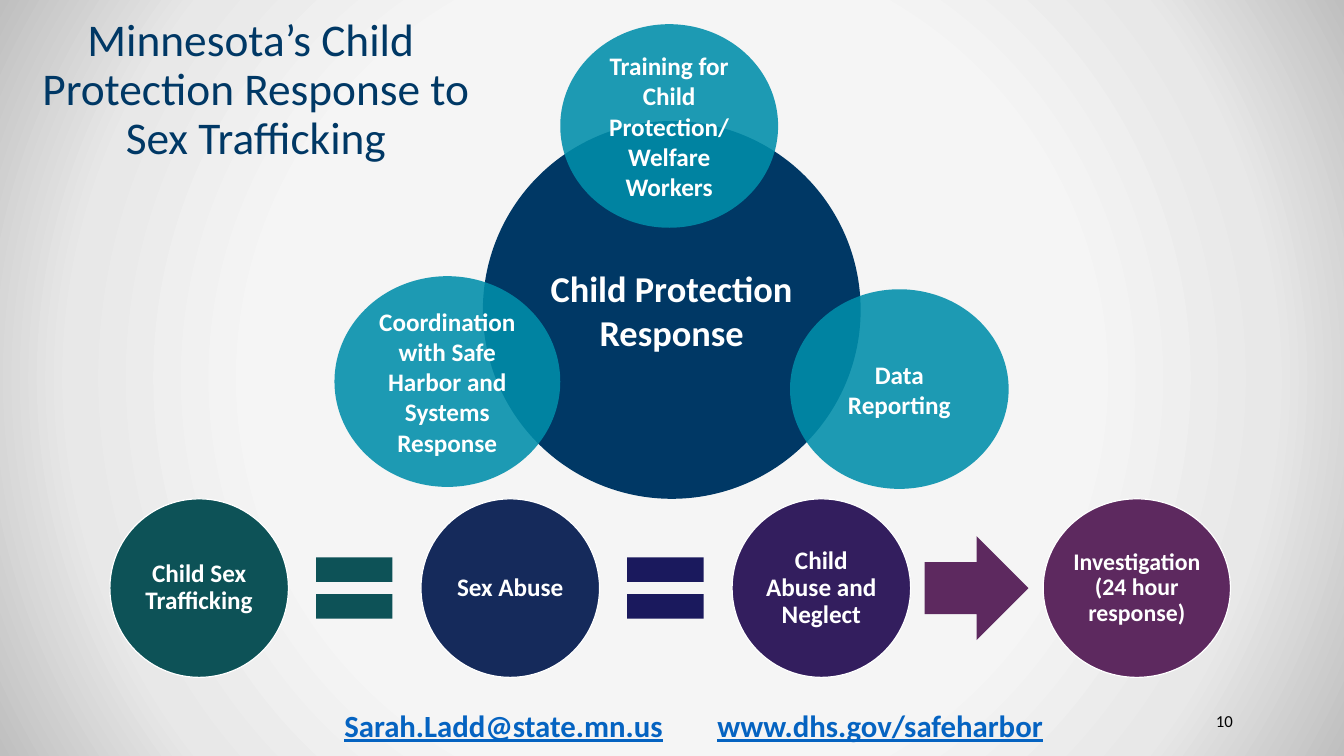
from dataclasses import dataclass

from lxml.etree import SubElement
from pptx import Presentation
from pptx.dml.color import RGBColor
from pptx.enum.shapes import MSO_SHAPE
from pptx.enum.text import MSO_ANCHOR, MSO_AUTO_SIZE, PP_ALIGN
from pptx.oxml import parse_xml
from pptx.oxml.ns import nsdecls, qn
from pptx.util import Cm, Pt


@dataclass(frozen=True)
class Theme:
    font: str = "Calibri"
    navy: str = "003865"
    aqua: str = "008EAA"
    green: str = "0D5257"
    blue: str = "152A5B"
    indigo: str = "1A195D"
    violet: str = "331E5E"
    plum: str = "5D295F"
    white: str = "FFFFFF"
    black: str = "000000"
    link: str = "0563C1"
    title: float = 32.4
    hub: float = 26
    contact: float = 22
    label: float = 18
    small_label: float = 17
    number: float = 12
    background: tuple = ((53, "F5F5F5"), (78, "E8E8E8"), (100, "BFBFBF"))


class SlideBuilder:
    def __init__(self, slide, theme):
        self.s = slide
        self.t = theme

    def background(self):
        stops = "".join(
            f'<a:gs pos="{pos * 1000}"><a:srgbClr val="{color}"/></a:gs>'
            for pos, color in self.t.background
        )
        bg = parse_xml(
            f'<p:bg {nsdecls("p", "a")}><p:bgPr><a:gradFill><a:gsLst>{stops}</a:gsLst>'
            '<a:path path="circle"><a:fillToRect l="50000" t="50000" r="50000" b="50000"/>'
            "</a:path></a:gradFill><a:effectLst/></p:bgPr></p:bg>"
        )
        self.s._element.cSld.insert(0, bg)

    def style(self, p, size, color, bold=False, align=PP_ALIGN.CENTER, spacing=1.0):
        p.alignment = align
        p.line_spacing = spacing
        p.font.name = self.t.font
        p.font.size = Pt(size)
        p.font.bold = bold
        p.font.color.rgb = RGBColor.from_string(color)

    def title(self, text, x, y, w, h):
        sp = self.s.shapes.title
        sp.left, sp.top, sp.width, sp.height = Cm(x), Cm(y), Cm(w), Cm(h)
        tf = sp.text_frame
        tf.text = text
        tf.word_wrap = True
        tf.auto_size = MSO_AUTO_SIZE.NONE
        tf.vertical_anchor = MSO_ANCHOR.MIDDLE
        self.style(tf.paragraphs[0], self.t.title, self.t.navy, spacing=0.9)

    def shape(self, kind, x, y, w, h, fill, alpha=100, line=None):
        sp = self.s.shapes.add_shape(kind, Cm(x), Cm(y), Cm(w), Cm(h))
        sp.shadow.inherit = False
        sp.fill.solid()
        sp.fill.fore_color.rgb = RGBColor.from_string(fill)
        if alpha < 100:
            color = sp._element.spPr.find(qn("a:solidFill")).find(qn("a:srgbClr"))
            SubElement(color, qn("a:alpha"), val=str(alpha * 1000))
        if line:
            sp.line.color.rgb = RGBColor.from_string(line)
            sp.line.width = Pt(0.85)
        else:
            sp.line.fill.background()
        return sp

    def circle(self, text, x, y, w, h, fill, size, alpha=100, line=None, inset=None, spacing=1.0):
        sp = self.shape(MSO_SHAPE.OVAL, x, y, w, h, fill, alpha, line)
        tf = sp.text_frame
        tf.text = text
        tf.word_wrap = True
        tf.vertical_anchor = MSO_ANCHOR.MIDDLE
        if inset is not None:
            tf.margin_left = tf.margin_right = tf.margin_top = tf.margin_bottom = Cm(inset)
        for p in tf.paragraphs:
            self.style(p, size, self.t.white, True, spacing=spacing)

    def textbox(self, text, x, y, w, h, size, color, bold=False,
                align=PP_ALIGN.LEFT, anchor=MSO_ANCHOR.TOP):
        tf = self.s.shapes.add_textbox(Cm(x), Cm(y), Cm(w), Cm(h)).text_frame
        tf.word_wrap = True
        tf.vertical_anchor = anchor
        p = tf.paragraphs[0]
        p.text = text
        self.style(p, size, color, bold, align)
        return p

    def contacts(self, addresses, x, y, w, h, tab):
        p = self.textbox("", x, y, w, h, self.t.contact, self.t.link, True)
        tabs = SubElement(p._p.get_or_add_pPr(), qn("a:tabLst"))
        SubElement(tabs, qn("a:tab"), pos=str(Cm(tab)), algn="l")
        p._p.pPr.insert_element_before(tabs, "a:defRPr")
        for i, address in enumerate(addresses):
            if i:
                p.add_run().text = "\t"
            r = p.add_run()
            r.text = address
            r.font.underline = True
            r.font.size = Pt(self.t.contact)
            r.font.color.rgb = RGBColor.from_string(self.t.link)


def main():
    prs = Presentation()
    prs.slide_width, prs.slide_height = Cm(33.87), Cm(19.05)
    theme = Theme()
    b = SlideBuilder(prs.slides.add_slide(prs.slide_layouts[5]), theme)

    b.background()
    b.title("Minnesota’s Child \vProtection Response to Sex Trafficking", 0.81, 1.02, 11.28, 2.54)

    steps = [
        ("Child Sex Trafficking", theme.green, 4.5, theme.label, 0.08),
        ("Sex Abuse", theme.blue, 4.5, theme.label, 0.08),
        ("Child Abuse and Neglect", theme.violet, 4.5, theme.label, 0.08),
        ("Investigation (24 hour response)", theme.plum, 4.72, theme.small_label, 0.05),
    ]
    operators = [
        (MSO_SHAPE.MATH_EQUAL, theme.green),
        (MSO_SHAPE.MATH_EQUAL, theme.indigo),
        (MSO_SHAPE.RIGHT_ARROW, theme.plum),
    ]
    left, pitch = 2.77, 7.84
    for i, (text, fill, width, size, inset) in enumerate(steps):
        b.circle(text, left + i * pitch, 12.57, width, 4.5, fill, size,
                 line=theme.white, inset=inset, spacing=0.9)
    for i, (kind, fill) in enumerate(operators):
        b.shape(kind, left + 4.85 + i * pitch, 13.51, 2.62, 2.62, fill)

    b.textbox("10", 27.51, 17.65, 3.81, 1.02, theme.number, theme.black,
              align=PP_ALIGN.RIGHT, anchor=MSO_ANCHOR.MIDDLE)

    b.circle("Child Protection Response", 12.17, 3.05, 9.52, 9.52, theme.navy, theme.hub)
    satellites = [
        ("Data\nReporting", 19.91, 7.29, 5.51, 5.03),
        ("Training for Child Protection/Welfare Workers", 14.12, 0.61, 5.49, 5.13),
        ("Coordination with Safe Harbor and Systems Response", 8.43, 6.96, 5.69, 5.31),
    ]
    for text, x, y, w, h in satellites:
        b.circle(text, x, y, w, h, theme.aqua, theme.label, alpha=88)

    b.contacts(["Sarah.Ladd@state.mn.us", "www.dhs.gov/safeharbor"], 8.43, 17.68, 19.08, 1.19, 9.4)
    prs.save("out.pptx")


if __name__ == "__main__":
    main()
